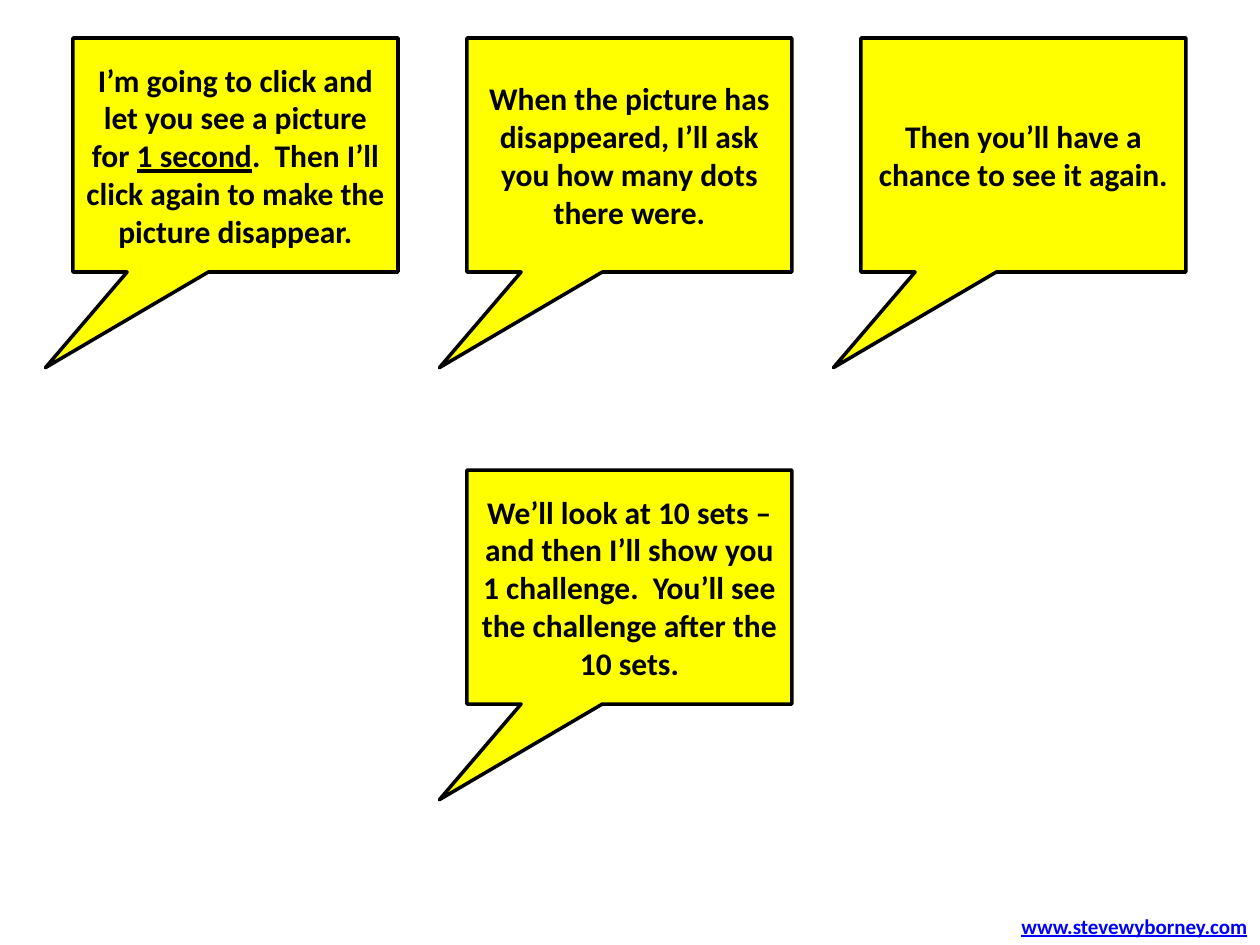
from pptx import Presentation
from pptx.dml.color import RGBColor
from pptx.enum.shapes import MSO_SHAPE as Shape
from pptx.enum.text import MSO_ANCHOR as Anchor, MSO_AUTO_SIZE as AutoSize, PP_ALIGN as Align
from pptx.util import Emu, Pt

PX_PER_INCH = 126
SLIDE_W, SLIDE_H = 1260, 945
COLORS = {"bubble": "FFFF00", "ink": "000000", "web": "0000FF"}

# Callout grid
GRID_LEFT, GRID_TOP = 73, 38
BUBBLE_W, BUBBLE_H = 325, 234
COLUMN_STEP, ROW_STEP = 394, 432
TAIL_TIP = (-0.585, 0.909)

SPEECH_FONT = {"name": "Calibri", "size": Pt(18), "bold": True}
WEB_FONT = {"name": "Calibri", "size": Pt(12), "bold": True, "underline": True}

# (column, row, [(wording, extra font values)])
SPEECHES = [
    (0, 0, [("I’m going to click and let you see a picture for ", {}),
            ("1 second", {"underline": True}),
            (".  Then I’ll click again to make the picture disappear.", {})]),
    (1, 0, [("When the picture has disappeared, I’ll ask you how many dots there were.", {})]),
    (2, 0, [("Then you’ll have a chance to see it again.", {})]),
    (1, 1, [("We’ll look at 10 sets – and then I’ll show you 1 challenge.  "
             "You’ll see the challenge after the 10 sets.", {})]),
]


def px(length):
    return Emu(round(length * 914400 / PX_PER_INCH))


def color(name):
    return RGBColor.from_string(COLORS[name])


def add_run(paragraph, wording, font_values, color_name):
    run = paragraph.add_run()
    run.text = wording
    for attribute, value in font_values.items():
        setattr(run.font, attribute, value)
    run.font.color.rgb = color(color_name)


def add_bubble(slide, column, row, speech):
    bubble = slide.shapes.add_shape(
        Shape.RECTANGULAR_CALLOUT,
        px(GRID_LEFT + column * COLUMN_STEP), px(GRID_TOP + row * ROW_STEP),
        px(BUBBLE_W), px(BUBBLE_H))
    bubble.shadow.inherit = False
    for index, offset in enumerate(TAIL_TIP):
        bubble.adjustments[index] = offset
    bubble.fill.solid()
    bubble.fill.fore_color.rgb = color("bubble")
    bubble.line.color.rgb = color("ink")
    bubble.line.width = Pt(2)

    frame = bubble.text_frame
    frame.word_wrap = True
    frame.vertical_anchor = Anchor.MIDDLE
    paragraph = frame.paragraphs[0]
    paragraph.alignment = Align.CENTER
    for wording, extra in speech:
        add_run(paragraph, wording, SPEECH_FONT | extra, "ink")


def add_web_address(slide, address):
    width, height = 255, 38
    frame = slide.shapes.add_textbox(
        px(SLIDE_W - width), px(SLIDE_H - height), px(width), px(height)).text_frame
    frame.word_wrap = False
    frame.auto_size = AutoSize.SHAPE_TO_FIT_TEXT
    paragraph = frame.paragraphs[0]
    paragraph.alignment = Align.RIGHT
    add_run(paragraph, address, WEB_FONT, "web")


def main():
    deck = Presentation()
    deck.slide_width, deck.slide_height = px(SLIDE_W), px(SLIDE_H)
    slide = deck.slides.add_slide(deck.slide_layouts[6])  # blank layout

    add_web_address(slide, "www.stevewyborney.com")
    for column, row, speech in SPEECHES:
        add_bubble(slide, column, row, speech)

    deck.save("out.pptx")


if __name__ == "__main__":
    main()
